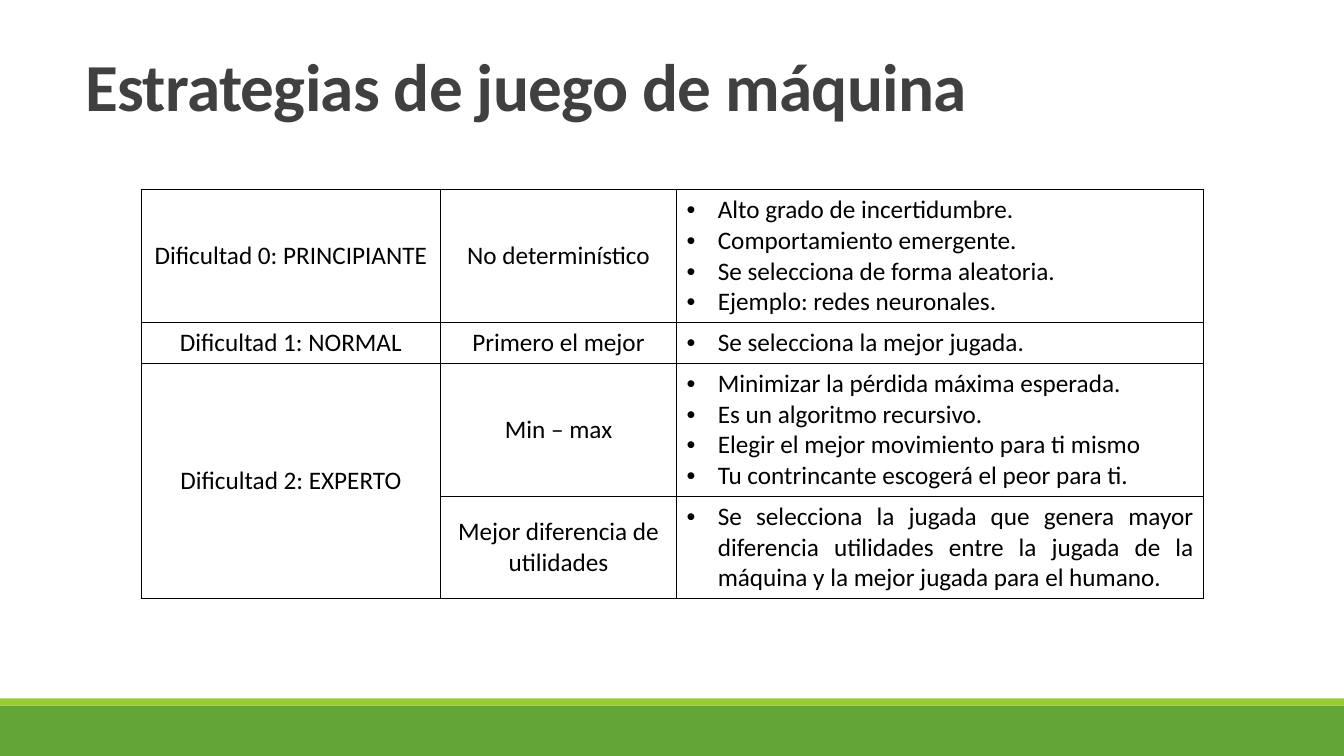
from lxml import etree
from pptx import Presentation
from pptx import util as u
from pptx.dml.color import RGBColor
from pptx.enum import shapes, text
from pptx.oxml import ns

FONT = "Calibri"
BLACK = "000000"
COLUMN_WIDTHS = [2.97, 2.34, 5.23]
LINE_HEIGHT = 0.305
CELL_PADDING = 0.1

# Level, strategy, features, lines of text in the row
STRATEGIES = [
    ("Dificultad 0: PRINCIPIANTE", "No determinístico",
     ["Alto grado de incertidumbre.", "Comportamiento emergente.",
      "Se selecciona de forma aleatoria.", "Ejemplo: redes neuronales."], 4),
    ("Dificultad 1: NORMAL", "Primero el mejor",
     ["Se selecciona la mejor jugada."], 1),
    ("Dificultad 2: EXPERTO", "Min – max",
     ["Minimizar la pérdida máxima esperada.", "Es un algoritmo recursivo.",
      "Elegir el mejor movimiento para ti mismo",
      "Tu contrincante escogerá el peor para ti."], 4),
    (None, "Mejor diferencia de utilidades",
     ["Se selecciona la jugada que genera mayor diferencia utilidades entre "
      "la jugada de la máquina y la mejor jugada para el humano."], 3),
]


def color(value):
    return RGBColor.from_string(value)


def add_span(para, words, size, ink, bold=False):
    span = para.add_run()
    span.text = words
    span.font.name = FONT
    span.font.size = u.Pt(size)
    span.font.bold = bold
    span.font.color.rgb = color(ink)
    return span


def add_band(page, left, top, width, height, fill):
    band = page.shapes.add_shape(
        shapes.MSO_SHAPE.RECTANGLE, *map(u.Inches, (left, top, width, height)))
    band.shadow.inherit = False
    band.fill.solid()
    band.fill.fore_color.rgb = color(fill)
    band.line.fill.background()


def add_footer(page, left, top, width, height):
    """Draw a green footer with a thin lighter stripe along its top."""
    stripe = 0.07
    add_band(page, left, top + stripe, width, height - stripe, "63A537")
    add_band(page, left, top, width, stripe, "99CB38")


def add_title(page, left, top, width, height):
    box = page.shapes.add_textbox(*map(u.Inches, (left, top, width, height)))
    box.text_frame.word_wrap = True
    para = box.text_frame.paragraphs[0]
    para.alignment = text.PP_ALIGN.JUSTIFY
    para.line_spacing = 0.85
    span = add_span(para, "Estrategias de juego de máquina", 48, "404040", True)
    span.font._element.set("spc", "-50")


def set_borders(cell):
    properties = cell._tc.get_or_add_tcPr()
    for index, side in enumerate(("a:lnL", "a:lnR", "a:lnT", "a:lnB")):
        line = etree.Element(ns.qn(side), w=str(u.Pt(1)))
        fill = etree.SubElement(line, ns.qn("a:solidFill"))
        etree.SubElement(fill, ns.qn("a:srgbClr"), val=BLACK)
        properties.insert(index, line)


def add_bullet(para):
    indent = u.Inches(0.31)
    properties = para._p.get_or_add_pPr()
    properties.set("marL", str(indent))
    properties.set("indent", str(-indent))
    etree.SubElement(properties, ns.qn("a:buFont"), typeface="Arial")
    etree.SubElement(properties, ns.qn("a:buChar"), char="•")


def write_label(cell, words):
    cell.vertical_anchor = text.MSO_ANCHOR.MIDDLE
    para = cell.text_frame.paragraphs[0]
    para.alignment = text.PP_ALIGN.CENTER
    add_span(para, words, 18, BLACK)


def write_features(cell, features):
    frame = cell.text_frame
    for index, feature in enumerate(features):
        para = frame.add_paragraph() if index else frame.paragraphs[0]
        para.alignment = text.PP_ALIGN.JUSTIFY
        add_bullet(para)
        add_span(para, feature, 18, BLACK)


def add_strategy_table(page, left, top):
    heights = [lines * LINE_HEIGHT + CELL_PADDING for *_, lines in STRATEGIES]
    size = (sum(COLUMN_WIDTHS), sum(heights))
    table = page.shapes.add_table(
        len(STRATEGIES), len(COLUMN_WIDTHS),
        *map(u.Inches, (left, top, *size))).table
    table.first_row = table.horz_banding = False
    for column, width in zip(table.columns, COLUMN_WIDTHS):
        column.width = u.Inches(width)
    for row, height in zip(table.rows, heights):
        row.height = u.Inches(height)
    for cell in table.iter_cells():
        cell.fill.background()
        set_borders(cell)
    for index, (level, strategy, features, _) in enumerate(STRATEGIES):
        if level:
            write_label(table.cell(index, 0), level)
        else:
            table.cell(index - 1, 0).merge(table.cell(index, 0))
        write_label(table.cell(index, 1), strategy)
        write_features(table.cell(index, 2), features)


def main():
    deck = Presentation()
    deck.slide_width, deck.slide_height = u.Inches(13.33), u.Inches(7.5)
    page = deck.slides.add_slide(deck.slide_layouts[6])
    add_footer(page, 0, 6.93, 13.33, 0.57)
    add_title(page, 0.75, 0.51, 11.97, 1.55)
    add_strategy_table(page, 1.4, 1.88)
    deck.save("out.pptx")


if __name__ == "__main__":
    main()
